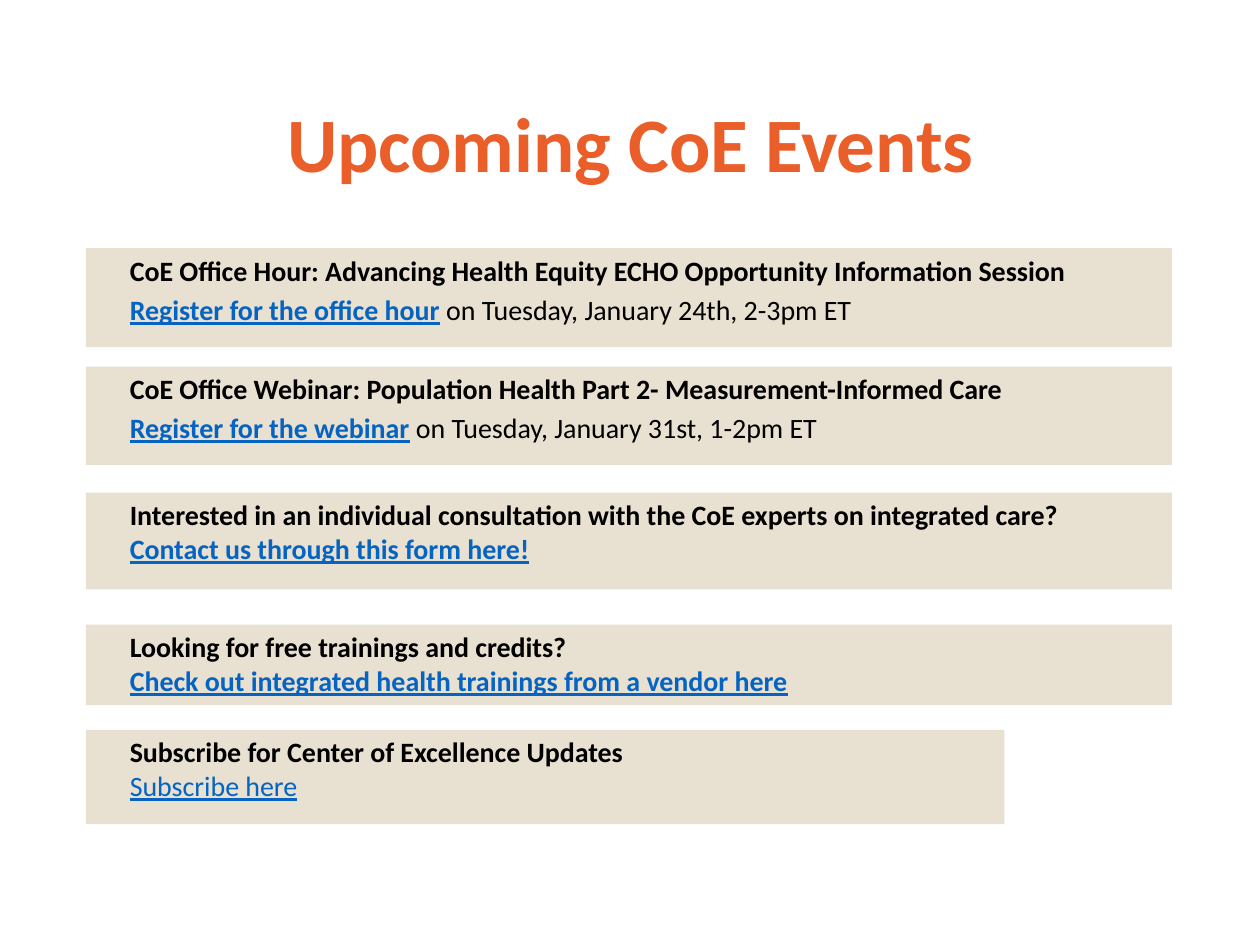
from dataclasses import dataclass

from pptx import Presentation
from pptx.dml.color import RGBColor
from pptx.enum.shapes import MSO_SHAPE
from pptx.enum.text import MSO_ANCHOR, PP_ALIGN
from pptx.util import Pt

RECTANGLE = MSO_SHAPE.RECTANGLE
TOP, MIDDLE = MSO_ANCHOR.TOP, MSO_ANCHOR.MIDDLE
LEFT, CENTER = PP_ALIGN.LEFT, PP_ALIGN.CENTER

ORANGE = RGBColor(0xEA, 0x5E, 0x29)
SAND = RGBColor(0xE8, 0xE0, 0xD1)
LINK_BLUE = RGBColor(0x05, 0x63, 0xC1)
BLACK = RGBColor(0, 0, 0)

BAND_LEFT = 49
BAND_WIDTH = 620.6
BODY_SIZE = 16
HEADING_INDENT = 20.16

TITLE_FONT = {"name": "Calibri", "size": Pt(44), "bold": True}
BODY_FONT = {"name": "Calibri", "size": Pt(BODY_SIZE)}
BAND_FRAME = {
    "word_wrap": True, "vertical_anchor": TOP,
    "margin_left": Pt(5), "margin_right": Pt(5),
    "margin_top": Pt(2.9), "margin_bottom": Pt(2.9),
}


@dataclass
class Event:
    top: float
    height: float
    heading: str
    link: str
    schedule: str = ""
    width: float = BAND_WIDTH
    link_bold: bool = True
    link_gap: float = 0


DATED_GAP = 0.2 * BODY_SIZE
EVENTS = [
    Event(141.84, 56.6,
          "CoE Office Hour: Advancing Health Equity ECHO Opportunity Information Session",
          "Register for the office hour", "on Tuesday, January 24th, 2-3pm ET",
          link_gap=DATED_GAP),
    Event(209.5, 56.2,
          "CoE Office Webinar: Population Health Part 2- Measurement-Informed Care",
          "Register for the webinar", "on Tuesday, January 31st, 1-2pm ET",
          link_gap=DATED_GAP),
    Event(281.5, 55.4,
          "Interested in an individual consultation with the CoE experts on integrated care?",
          "Contact us through this form here!"),
    Event(357, 46,
          "Looking for free trainings and credits?",
          "Check out integrated health trainings from a vendor here"),
    Event(417, 54,
          "Subscribe for Center of Excellence Updates",
          "Subscribe here", width=525, link_bold=False),
]


def apply(target, values: dict) -> None:
    for attribute, value in values.items():
        setattr(target, attribute, value)


def add_run(paragraph, text: str, color: RGBColor, **style) -> None:
    run = paragraph.add_run()
    run.text = text
    apply(run.font, BODY_FONT | style)
    run.font.color.rgb = color


def format_line(paragraph, space_before: float = 0) -> None:
    apply(paragraph, {"level": 1, "alignment": LEFT,
                      "space_before": Pt(space_before)})
    properties = paragraph._p.get_or_add_pPr()
    properties.set("marL", str(Pt(HEADING_INDENT)))
    properties.set("indent", "0")


def add_title(slide, text: str) -> None:
    title = slide.shapes.title
    apply(title, {"left": Pt(42), "top": Pt(29),
                  "width": Pt(637), "height": Pt(104)})
    apply(title.text_frame, {"text": text, "vertical_anchor": MIDDLE})
    heading = title.text_frame.paragraphs[0]
    heading.alignment = CENTER
    font = heading.runs[0].font
    apply(font, TITLE_FONT)
    font.color.rgb = ORANGE


def add_event(slide, event: Event) -> None:
    band = slide.shapes.add_shape(RECTANGLE, Pt(BAND_LEFT), Pt(event.top),
                                  Pt(event.width), Pt(event.height))
    band.shadow.inherit = False
    band.fill.solid()
    band.fill.fore_color.rgb = SAND
    band.line.fill.background()
    frame = band.text_frame
    apply(frame, BAND_FRAME)

    heading = frame.paragraphs[0]
    format_line(heading)
    add_run(heading, event.heading, BLACK, bold=True)

    details = frame.add_paragraph()
    format_line(details, event.link_gap)
    add_run(details, event.link, LINK_BLUE, bold=event.link_bold, underline=True)
    if event.schedule:
        add_run(details, " ", BLACK, bold=True)
        add_run(details, event.schedule, BLACK, bold=False)


def main() -> None:
    presentation = Presentation()
    apply(presentation, {"slide_width": Pt(720), "slide_height": Pt(540)})
    slide = presentation.slides.add_slide(presentation.slide_layouts[5])

    # Title
    add_title(slide, "Upcoming CoE Events")

    # Event bands
    for event in EVENTS:
        add_event(slide, event)

    presentation.save("out.pptx")


if __name__ == "__main__":
    main()
